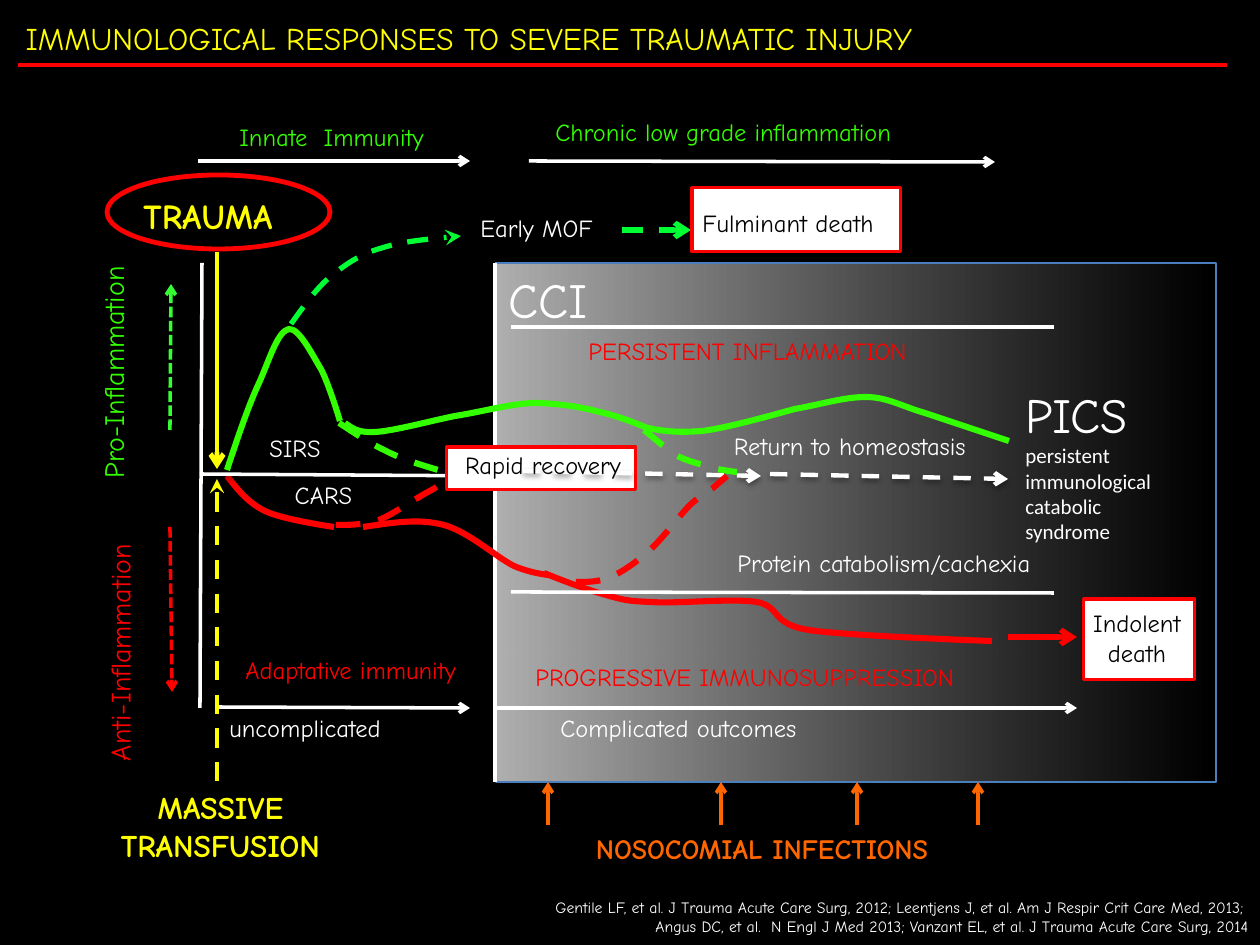
import lxml.etree
import pptx
import pptx.dml.color
import pptx.enum.dml
import pptx.enum.shapes
import pptx.enum.text
import pptx.oxml.ns
import pptx.util

EMU_PER_PX = 914400 / 126
WHITE, BLACK, RED, YELLOW = "FFFFFF", "000000", "FF0000", "FFFF00"
GREEN, MINT, ORANGE = "33FF00", "00FF33", "FF6600"
SHAPE = pptx.enum.shapes.MSO_SHAPE
DASH = pptx.enum.dml.MSO_LINE.DASH
SHORT_DASH = pptx.enum.dml.MSO_LINE.SQUARE_DOT
ALIGN = pptx.enum.text.PP_ALIGN
qn = pptx.oxml.ns.qn


def px(*lengths):
    return [pptx.util.Emu(round(length * EMU_PER_PX)) for length in lengths]


def rgb(color):
    return pptx.dml.color.RGBColor.from_string(color)


def apply(target, values):
    for key, value in values.items():
        setattr(target, key, value)


class Diagram:
    """Draws styled elements on the current slide."""

    def __init__(self, slide, font="Comic Neue"):
        self.slide, self.shapes, self.font = slide, slide.shapes, font
        slide.background.fill.solid()
        slide.background.fill.fore_color.rgb = rgb(BLACK)

    def fill_text(self, box, text, color, size=14, align=ALIGN.LEFT, wrap=True, bold=False,
                  fit=pptx.enum.text.MSO_AUTO_SIZE.SHAPE_TO_FIT_TEXT):
        frame = box.text_frame
        frame.text = text
        apply(frame, {"word_wrap": wrap, "auto_size": fit,
                      "vertical_anchor": pptx.enum.text.MSO_ANCHOR.TOP})
        for paragraph in frame.paragraphs:
            paragraph.alignment = align
            apply(paragraph.font, {"name": self.font, "size": pptx.util.Pt(size), "bold": bold})
            paragraph.font.color.rgb = rgb(color)

    def title(self, place, text, color, size):
        heading = self.shapes.title
        apply(heading, dict(zip(("left", "top", "width", "height"), px(*place))))
        self.fill_text(heading, text, color, size, fit=pptx.enum.text.MSO_AUTO_SIZE.NONE)

    def label(self, place, text, color, rotation=0, **style):
        box = self.shapes.add_textbox(*px(*place))
        box.rotation = rotation
        self.fill_text(box, text, color, **style)
        return box

    def stroke(self, shape, color, width, dash=None, head=None, tail=None):
        apply(shape.line, {"width": pptx.util.Pt(width), "dash_style": dash})
        shape.line.color.rgb = rgb(color)
        outline = shape._element.spPr.find(qn("a:ln"))
        for end, kind in (("a:headEnd", head), ("a:tailEnd", tail)):
            if kind:
                lxml.etree.SubElement(outline, qn(end), type=kind)

    def line(self, start, end, color=WHITE, width=2, shadow=False, **style):
        connector = self.shapes.add_connector(
            pptx.enum.shapes.MSO_CONNECTOR.STRAIGHT, *px(*start, *end))
        self.stroke(connector, color, width, **style)
        effects = lxml.etree.SubElement(connector._element.spPr, qn("a:effectLst"))
        if shadow:
            outer = lxml.etree.SubElement(effects, qn("a:outerShdw"), blurRad="40000",
                                          dist="20000", dir="5400000", rotWithShape="0")
            shade = lxml.etree.SubElement(outer, qn("a:srgbClr"), val=BLACK)
            lxml.etree.SubElement(shade, qn("a:alpha"), val="38000")

    def arrow(self, start, end, color=WHITE, width=2, **style):
        self.line(start, end, color, width, tail="arrow", **style)

    def shape(self, place, kind=SHAPE.RECTANGLE, fill=WHITE, color=RED, width=1.75):
        figure = self.shapes.add_shape(kind, *px(*place))
        figure.shadow.inherit = False
        if fill:
            figure.fill.solid()
            figure.fill.fore_color.rgb = rgb(fill)
        else:
            figure.fill.background()
        self.stroke(figure, color, width)
        return figure

    def gradient(self, place, stops, **outline):
        panel = self.shape(place, **outline)
        panel.fill.gradient()
        panel.fill.gradient_angle = 0
        for stop, (color, opacity) in zip(panel.fill.gradient_stops, stops):
            stop.color.rgb = rgb(color)
        tints = panel._element.spPr.find(qn("a:gradFill")).iter(qn("a:srgbClr"))
        for tint, (color, opacity) in zip(tints, stops):
            lxml.etree.SubElement(tint, qn("a:alpha"), val=str(opacity * 1000))

    def curve(self, points, color, width=3.5, **style):
        """Draw cubic segments: a start point, then three points for each segment."""
        builder = self.shapes.build_freeform(*points[0], scale=EMU_PER_PX)
        builder.add_line_segments(points[1:], close=False)
        course = builder.convert_to_shape()
        course.shadow.inherit = False
        course.fill.background()
        self.stroke(course, color, width, **style)
        outline = next(course._element.iter(qn("a:path")))
        steps = outline.findall(qn("a:lnTo"))
        for index in range(0, len(steps), 3):
            bend = lxml.etree.SubElement(outline, qn("a:cubicBezTo"))
            for step in steps[index:index + 3]:
                bend.append(step[0])
                outline.remove(step)


def draw_early_phase(d):
    d.curve([(227, 470), (238, 437), (249, 404), (260, 381), (270, 358), (278, 331), (289, 329),
             (299, 328), (312, 354), (321, 369), (329, 384), (340, 421), (340, 421)], GREEN)
    d.curve([(339, 423), (353, 432), (367, 442), (384, 450), (401, 459), (421, 465), (438, 470),
             (457, 474), (496, 476), (496, 476)], GREEN, dash=DASH)
    d.curve([(227, 476), (238, 490), (249, 504), (267, 512),
             (285, 520), (334, 527), (334, 527)], RED)
    d.curve([(336, 525), (350, 525), (364, 525), (379, 520), (394, 514), (416, 498), (430, 491),
             (442, 484), (450, 479), (459, 476), (467, 474), (481, 476), (481, 476)],
            RED, dash=DASH)
    d.arrow((200, 474), (496, 476), shadow=True)
    d.line((202, 263), (200, 708))
    d.arrow((170, 430), (171, 284), "33FF33", dash=SHORT_DASH)
    d.arrow((170, 527), (172, 692), RED, dash=SHORT_DASH)
    d.label((-15, 339, 257, 47), "Pro-Inflammation", GREEN, 270, size=16, wrap=False)
    d.label((-15, 615, 270, 47), "Anti-Inflammation", RED, 270, size=16, wrap=False)
    d.label((233, 649, 262, 43), "Adaptative immunity", RED, wrap=False)
    d.label((227, 116, 227, 43), "Innate  Immunity", GREEN, wrap=False)
    d.label((217, 707, 188, 43), "uncomplicated", WHITE, wrap=False)
    d.label((131, 188, 181, 55), "TRAUMA", YELLOW, size=20, wrap=False, bold=True)
    d.label((219, 427, 152, 43), "SIRS", WHITE, align=ALIGN.CENTER)
    d.label((262, 474, 123, 43), "CARS", WHITE, align=ALIGN.CENTER)
    d.arrow((217, 707), (470, 708))
    d.arrow((198, 161), (470, 161))
    d.line((495, 263), (495, 782))
    d.arrow((217, 252), (217, 469), YELLOW, 2.75)
    d.shape((107, 175, 223, 74), SHAPE.OVAL, fill=None, width=2.75)
    d.line((217, 479), (217, 782), YELLOW, 2.75, dash=DASH, head="stealth")
    d.label((84, 782, 273, 89), "MASSIVE TRANSFUSION", YELLOW, size=18,
            align=ALIGN.CENTER, bold=True)


def draw_recovery(d):
    d.shape((447, 447, 189, 43))
    d.arrow((523, 471), (761, 476), width=2.5, dash=DASH, shadow=True)
    d.curve([(345, 423), (352, 428), (358, 433), (375, 432), (394, 431), (430, 421), (455, 416),
             (481, 412), (509, 404), (533, 403), (557, 403), (581, 407), (600, 412),
             (619, 416), (645, 427), (645, 427)], GREEN)
    d.curve([(363, 527), (391, 523), (418, 518), (444, 525), (469, 532), (496, 557), (514, 566),
             (530, 573), (548, 575), (548, 575)], RED)
    d.curve([(644, 430), (654, 438), (664, 447), (674, 454), (684, 460), (696, 463), (707, 466),
             (717, 470), (737, 472), (737, 472)], GREEN, dash=DASH)
    d.curve([(576, 582), (587, 582), (599, 582), (611, 577), (624, 571), (638, 561), (651, 549),
             (664, 537), (680, 515), (690, 505), (701, 495), (713, 488), (713, 488),
             (718, 484), (722, 480), (727, 476)], RED, dash=DASH)
    d.label((687, 425, 326, 43), "Return to homeostasis", WHITE, align=ALIGN.CENTER)


def draw_chronic_phase(d):
    d.label((450, 825, 624, 47), "NOSOCOMIAL INFECTIONS", ORANGE, size=16,
            align=ALIGN.CENTER, bold=True)
    for infection in (548, 721, 857, 978):
        d.arrow((infection, 825), (infection, 782), ORANGE, shadow=True)
    d.label((548, 707, 280, 43), "Complicated outcomes", WHITE, wrap=False)
    d.label((523, 656, 503, 43), "PROGRESSIVE IMMUNOSUPPRESSION", RED, wrap=False)
    d.arrow((770, 474), (1008, 479), width=2.5, dash=DASH, shadow=True)
    d.label((543, 111, 384, 43), "Chronic low grade inflammation", GREEN, wrap=False)
    d.arrow((529, 161), (995, 162))
    d.curve([(544, 573), (566, 582), (588, 590), (606, 595), (624, 600), (626, 601), (651, 602),
             (677, 604), (731, 598), (757, 602), (782, 607), (770, 624), (809, 630),
             (848, 636), (992, 641), (992, 641)], RED)
    d.curve([(644, 427), (660, 431), (676, 433), (702, 431), (727, 428), (769, 416), (795, 409),
             (823, 404), (844, 397), (866, 397), (887, 397), (901, 406), (925, 413),
             (949, 421), (1009, 441), (1009, 441)], GREEN)
    d.label((496, 263, 112, 72), "CCI", WHITE, size=28, wrap=False)
    d.label((576, 330, 461, 43), "PERSISTENT INFLAMMATION", RED)
    pics = d.label((1013, 378, 181, 174),
                   "PICS\npersistent immunological catabolic syndrome", WHITE, size=28)
    apply(pics.text_frame.paragraphs[1].font, {"name": "Calibri", "size": pptx.util.Pt(12)})
    d.label((654, 542, 460, 43), "Protein catabolism/cachexia", WHITE, align=ALIGN.CENTER)
    d.arrow((1008, 637), (1077, 637), RED, 3)
    d.arrow((495, 708), (1077, 708))
    d.line((511, 327), (1054, 327))
    d.line((511, 592), (1054, 593))


def draw_deaths(d):
    d.shape((1084, 599, 111, 81))
    d.label((1061, 602, 152, 72), "Indolent death", BLACK, align=ALIGN.CENTER)
    d.label((452, 207, 169, 43), "Early MOF", WHITE, align=ALIGN.CENTER)
    d.arrow((622, 230), (691, 230), MINT, 3, dash=DASH)
    d.curve([(291, 324), (304, 306), (315, 290), (330, 277), (345, 265), (360, 254), (382, 248),
             (404, 241), (461, 236), (461, 236)], MINT, 3, dash=DASH, tail="stealth")
    d.shape((692, 188, 209, 64))
    d.label((690, 202, 210, 43), "Fulminant death", BLACK, wrap=False)
    d.label((421, 444, 244, 43), "Rapid recovery", BLACK, align=ALIGN.CENTER)


def main():
    deck = pptx.Presentation()
    deck.slide_width, deck.slide_height = px(1260, 945)
    d = Diagram(deck.slides.add_slide(deck.slide_layouts.get_by_name("Title Only")))
    d.gradient((496, 263, 720, 519), [("D9D9D9", 81), (BLACK, 68)], color="4B7EBC", width=0.75)
    d.line((18, 65), (1227, 65), RED)
    d.title((13, 13, 1090, 50), "IMMUNOLOGICAL RESPONSES TO SEVERE TRAUMATIC INJURY", YELLOW, 18)
    d.label((170, 892, 1090, 50),
            "Gentile LF, et al. J Trauma Acute Care Surg, 2012; "
            "Leentjens J, et al. Am J Respir Crit Care Med, 2013; \n"
            "Angus DC, et al.  N Engl J Med 2013; "
            "Vanzant EL, et al. J Trauma Acute Care Surg, 2014",
            WHITE, size=9, align=ALIGN.RIGHT)
    draw_early_phase(d)
    draw_recovery(d)
    draw_chronic_phase(d)
    draw_deaths(d)
    deck.save("out.pptx")


if __name__ == "__main__":
    main()
